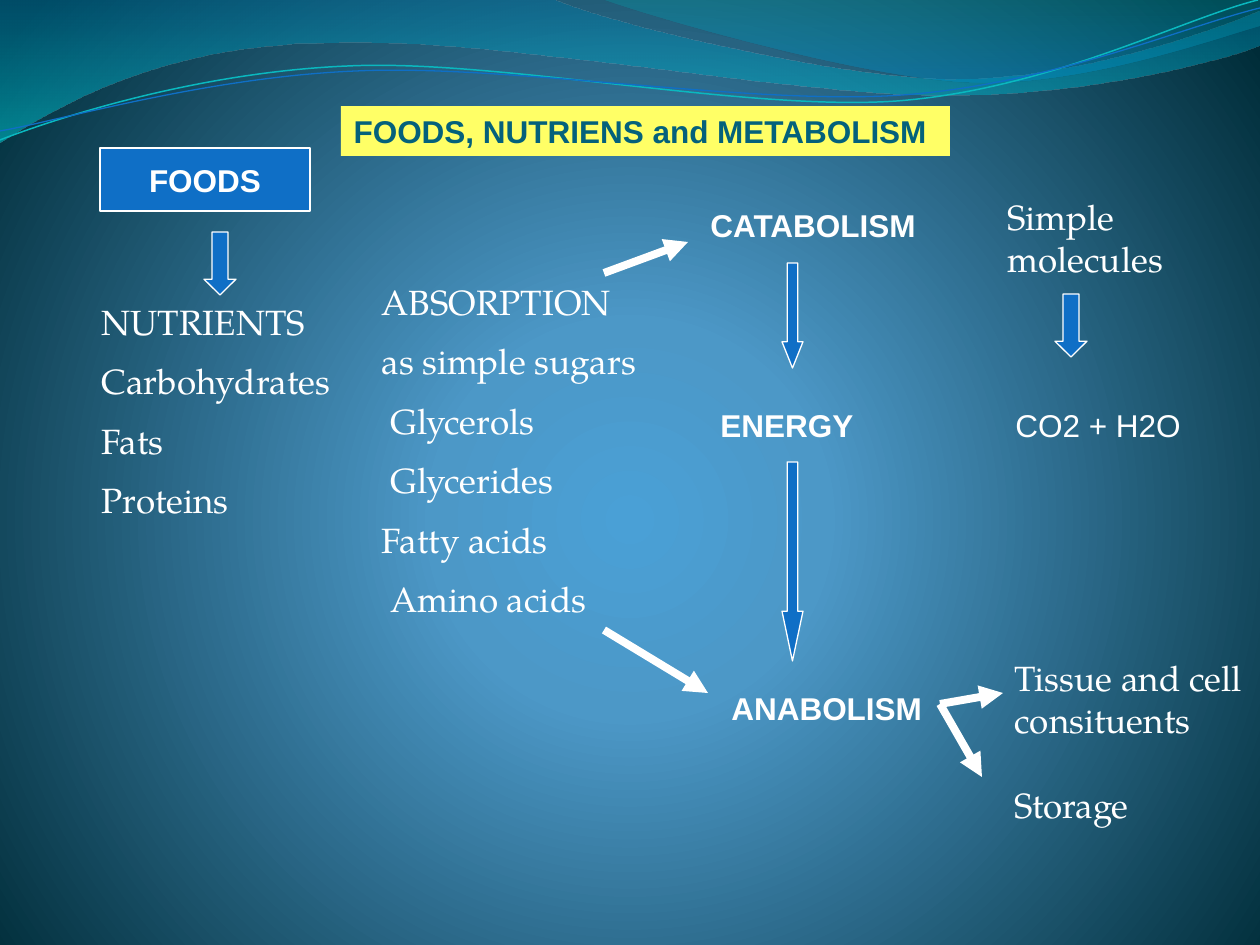
from lxml import etree
from pptx import Presentation, oxml
from pptx import util as u
from pptx.dml.color import RGBColor
from pptx.enum import shapes, text
from pptx.oxml import ns

SCALE = 914400 / 126
WIDTH, HEIGHT = 1260, 945
SERIF, SANS = "TeX Gyre Pagella", "Arial"
WHITE = RGBColor(0xFF, 0xFF, 0xFF)
BLUE = RGBColor(0x0F, 0x6F, 0xC6)
AQUA = RGBColor(0x0A, 0xB8, 0xBF)
YELLOW = RGBColor(0xFF, 0xFF, 0x66)
TEAL = RGBColor(0x04, 0x61, 0x7B)
GLOW = RGBColor(0x4A, 0xA0, 0xD6)
SKY = RGBColor(0x4C, 0x98, 0xC7)
NIGHT = RGBColor(0x00, 0x2C, 0x38)
OCEAN = RGBColor(0x00, 0x74, 0xA1)
CYAN = RGBColor(0x00, 0xC6, 0xCF)
LAGOON = RGBColor(0x00, 0xA1, 0xA9)
AZURE = RGBColor(0x00, 0x8B, 0xBF)
DOWNWARD = '<a:lin ang="5400000" scaled="1"/>'
RADIAL = ('<a:path path="circle"><a:fillToRect l="10000" t="110000" '
          'r="10000" b="100000"/></a:path>')


def px(value):
    return u.Emu(round(value * SCALE))


def place(shape, left, top, width, height):
    shape.left, shape.top = px(left), px(top)
    shape.width, shape.height = px(width), px(height)


def paint_gradient(fill, owner, stops, direction):
    fill.solid()
    solid = owner.find(".//" + ns.qn("a:solidFill"))
    gradient = oxml.parse_xml(
        f'<a:gradFill {ns.nsdecls("a")} rotWithShape="1">'
        f'<a:gsLst/>{direction}</a:gradFill>')
    for position, color, alpha in stops:
        stop = etree.SubElement(gradient[0], ns.qn("a:gs"), pos=str(position * 1000))
        shade = etree.SubElement(stop, ns.qn("a:srgbClr"), val=str(color))
        if alpha < 100:
            etree.SubElement(shade, ns.qn("a:alpha"), val=str(alpha * 1000))
    solid.getparent().replace(solid, gradient)


def write(box, lines, font=SERIF, size=20, color=WHITE, bold=False,
          align=text.PP_ALIGN.LEFT, anchor=text.MSO_ANCHOR.TOP, wrap=True,
          plain_list=False):
    frame = box.text_frame
    frame.word_wrap = wrap
    frame.vertical_anchor = anchor
    frame.auto_size = text.MSO_AUTO_SIZE.NONE
    for index, line in enumerate(lines):
        para = frame.add_paragraph() if index else frame.paragraphs[0]
        if plain_list:
            properties = para._p.get_or_add_pPr()
            properties.set("marL", "0")
            properties.set("indent", "0")
            etree.SubElement(properties, ns.qn("a:buNone"))
        para.alignment = align
        para.space_before = u.Pt(size / 2 if index else 0)
        span = para.add_run()
        span.text = line
        span.font.name, span.font.size = font, u.Pt(size)
        span.font.bold = bold
        span.font.color.rgb = color


def add_label(page, wording, left, top, width, height, **style):
    box = page.shapes.add_textbox(px(left), px(top), px(width), px(height))
    write(box, [wording], **style)


def add_block(page, kind, left, top, width, height):
    block = page.shapes.add_shape(kind, px(left), px(top), px(width), px(height))
    block.shadow.inherit = False
    block.fill.solid()
    block.fill.fore_color.rgb = BLUE
    block.line.color.rgb = WHITE
    block.line.width = u.Pt(0.75)
    return block


def add_down_arrow(page, left, top, width, height):
    arrow = add_block(page, shapes.MSO_SHAPE.DOWN_ARROW, left, top, width, height)
    arrow.adjustments[0] = 0.5
    arrow.adjustments[1] = height / 4 / width


def add_arrow_line(page, x1, y1, x2, y2):
    line = page.shapes.add_connector(
        shapes.MSO_CONNECTOR.STRAIGHT, px(x1), px(y1), px(x2), px(y2))
    line.line.color.rgb = WHITE
    line.line.width = u.Pt(4.5)
    etree.SubElement(line.line._get_or_add_ln(), ns.qn("a:tailEnd"), type="triangle")
    etree.SubElement(line._element.spPr, ns.qn("a:effectLst"))


def add_outline(page, start, segments, close):
    builder = page.shapes.build_freeform(px(start[0]), px(start[1]))
    for segment in segments:
        points = zip(segment[::2], segment[1::2])
        builder.add_line_segments([(px(x), px(y)) for x, y in points], close=False)
    outline = builder.convert_to_shape()
    outline.shadow.inherit = False
    track = outline._element.find(".//" + ns.qn("a:path"))
    steps = iter(track.findall(ns.qn("a:lnTo")))
    for segment in segments:
        parts = [next(steps) for _ in segment[::2]]
        if len(parts) == 3:
            curve = etree.Element(ns.qn("a:cubicBezTo"))
            parts[0].addprevious(curve)
            for part in parts:
                curve.append(part[0])
                track.remove(part)
    if close:
        etree.SubElement(track, ns.qn("a:close"))
    return outline


def add_waves(page, left, top, right):
    bands = [
        ((left, top),
         [(554, top), (600, 21, 837, 79, 955, 79), (1075, 79, 1207, 33, right, 11),
          (right, 45), (1239, 55, 1096, 96, 940, 95), (784, 95, 481, 35, 324, 43),
          (163, 45, 58, 105, left, 142)],
         [(0, OCEAN, 45), (100, CYAN, 55)]),
        ((604, top),
         [(641, 14, 859, 78, 969, 82), (1079, 87, 1211, 40, right, 26), (right, top)],
         [(0, LAGOON, 30), (80, AZURE, 45)]),
    ]
    for start, segments, stops in bands:
        band = add_outline(page, start, segments, True)
        paint_gradient(band.fill, band._element.spPr, stops, DOWNWARD)
        band.line.fill.background()
    strands = [
        ((left, 140),
         [(60, 117, 199, 72, 349, 66), (498, 59, 747, 112, 898, 101),
          (1050, 89, 1182, 19, 1258, top)], AQUA, 0.85),
        ((left, 131),
         [(59, 121, 207, 77, 357, 71), (508, 64, 752, 106, 903, 95),
          (1053, 84, 1186, 26, right, 8)], BLUE, 0.75),
    ]
    for start, segments, color, weight in strands:
        strand = add_outline(page, start, segments, False)
        strand.fill.background()
        strand.line.color.rgb = color
        strand.line.width = u.Pt(weight)


def add_title(page, *bounds):
    title = page.shapes.title
    place(title, *bounds)
    title.fill.solid()
    title.fill.fore_color.rgb = YELLOW
    write(title, ["FOODS, NUTRIENS and METABOLISM"],
          font=SANS, size=18, color=TEAL, bold=True)


def add_foods(page, left, top):
    foods = add_block(page, shapes.MSO_SHAPE.RECTANGLE, left + 11, top, 210, 63)
    write(foods, ["FOODS"], font=SANS, size=18, bold=True, wrap=False,
          align=text.PP_ALIGN.CENTER, anchor=text.MSO_ANCHOR.MIDDLE)
    add_down_arrow(page, left + 115, top + 84, 32, 63)
    nutrients = page.placeholders[1]
    place(nutrients, left, top + 146, 262, 243)
    write(nutrients, ["NUTRIENTS", "Carbohydrates", "Fats", "Proteins"],
          plain_list=True)


def add_absorption(page, left, top):
    absorption = page.placeholders[2]
    place(absorption, left, top, 358, 369)
    write(absorption, ["ABSORPTION", "as simple sugars", " Glycerols",
                       " Glycerides", "Fatty acids", " Amino acids"], plain_list=True)
    add_arrow_line(page, left + 235, top - 1, left + 319, top - 32)
    add_arrow_line(page, left + 235, top + 356, left + 339, top + 419)


def add_metabolism(page, left, top):
    stages = [("CATABOLISM", 0, 0), ("ENERGY", 10, 200), ("ANABOLISM", 21, 483)]
    for wording, x, y in stages:
        add_label(page, wording, left + x, top + y, 262, 50,
                  font=SANS, size=18, bold=True)
    for y, height in [(63, 105), (262, 199)]:
        add_down_arrow(page, left + 84, top + y, 21, height)


def add_products(page, left, top):
    add_label(page, "Simple molecules", left, top, 231, 97)
    add_down_arrow(page, left + 60, top + 105, 32, 63)
    add_label(page, "CO2 + H2O", left + 8, top + 211, 199, 50, font=SANS, size=18)
    add_label(page, "Tissue and cell consituents", left + 7, top + 461, 262, 97)
    add_label(page, "Storage", left + 7, top + 588, 262, 54)
    for x, y in [(8, 504), (-13, 588)]:
        add_arrow_line(page, left - 55, top + 515, left + x, top + y)


def main():
    deck = Presentation()
    deck.slide_width, deck.slide_height = px(WIDTH), px(HEIGHT)
    page = deck.slides.add_slide(deck.slide_layouts[3])
    paint_gradient(page.background.fill, page._element,
                   [(0, GLOW, 100), (25, SKY, 100), (100, NIGHT, 100)], RADIAL)
    add_waves(page, 0, 0, WIDTH)
    add_title(page, 341, 106, 609, 50)
    add_foods(page, 89, 148)
    add_absorption(page, 369, 274)
    add_metabolism(page, 698, 200)
    add_products(page, 995, 189)
    deck.save("out.pptx")


if __name__ == "__main__":
    main()
